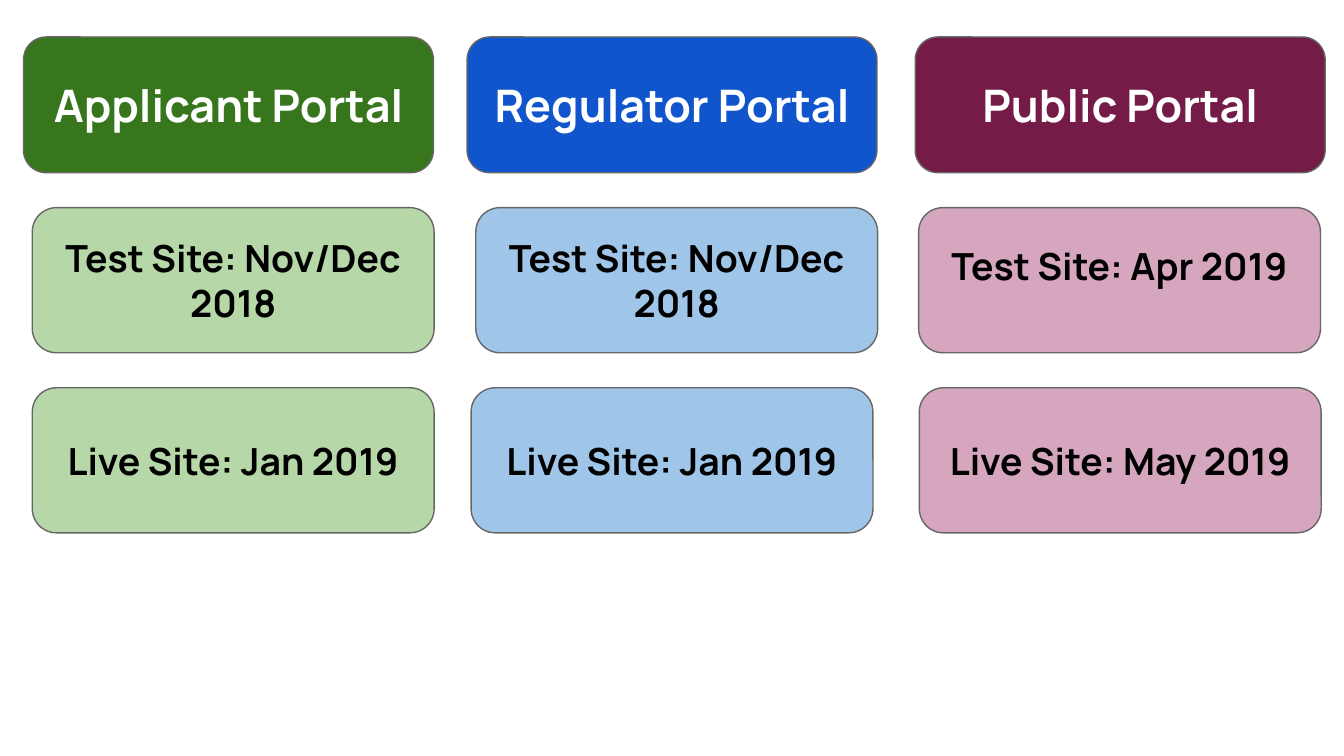
from dataclasses import dataclass

from pptx import Presentation
from pptx.dml.color import RGBColor
from pptx.enum.shapes import MSO_SHAPE as Shape
from pptx.enum.text import MSO_ANCHOR as Anchor, PP_ALIGN as Align
from pptx.util import Pt

PX = 4572  # EMU per px, 200 px to the inch


@dataclass(frozen=True)
class Theme:
    font: str = "Manrope"
    outline: str = "666666"
    light_text: str = "FFFFFF"
    dark_text: str = "000000"
    green: tuple = ("38761D", "B6D7A8")
    blue: tuple = ("1155CC", "9FC5E8")
    plum: tuple = ("741B47", "D5A6BD")
    header_size: int = 24
    site_size: int = 20
    line_width: float = 0.75


THEME = Theme()
SLIDE_W, SLIDE_H = 2000, 1125
TOP = 55
HEADER_W, HEADER_H = 610, 202
SITE_W, SITE_H = 598, 216
SITE_TOP, SITE_PITCH = 254, 268
INSET = 20

# left, (header fill, site fill), title, sites as (text, indent, lift)
PORTALS = [
    (35, THEME.green, "Applicant Portal",
     [("Test Site: Nov/Dec 2018", 13, 0), ("Live Site: Jan 2019", 13, 0)]),
    (695, THEME.blue, "Regulator Portal",
     [("Test Site: Nov/Dec 2018", 13, 0), ("Live Site: Jan 2019", 6, 0)]),
    (1362, THEME.plum, "Public Portal",
     [("Test Site: Apr 2019", 5, 22), ("Live Site: May 2019", 6, 0)]),
]


def add_card(slide, box, text, fill, color, size, lift=0):
    """Add a rounded card; lift raises its text above the middle, in px."""
    sp = slide.shapes.add_shape(Shape.ROUNDED_RECTANGLE, *(v * PX for v in box))
    sp.shadow.inherit = False
    sp.fill.solid()
    sp.fill.fore_color.rgb = RGBColor.from_string(fill)
    sp.line.color.rgb = RGBColor.from_string(THEME.outline)
    sp.line.width = Pt(THEME.line_width)

    tf = sp.text_frame
    tf.word_wrap = True
    tf.vertical_anchor = Anchor.MIDDLE
    tf.margin_left = tf.margin_right = tf.margin_top = INSET * PX
    tf.margin_bottom = (INSET + 2 * lift) * PX
    p = tf.paragraphs[0]
    p.text = text
    p.alignment = Align.CENTER
    p.font.name = THEME.font
    p.font.size = Pt(size)
    p.font.bold = True
    p.font.color.rgb = RGBColor.from_string(color)


def add_portal(slide, left, top, fills, title, sites):
    header_fill, site_fill = fills
    add_card(slide, (left, top, HEADER_W, HEADER_H), title,
             header_fill, THEME.light_text, THEME.header_size)
    for row, (text, indent, lift) in enumerate(sites):
        box = (left + indent, top + SITE_TOP + row * SITE_PITCH, SITE_W, SITE_H)
        add_card(slide, box, text, site_fill, THEME.dark_text,
                 THEME.site_size, lift)


def main():
    prs = Presentation()
    prs.slide_width, prs.slide_height = SLIDE_W * PX, SLIDE_H * PX
    slide = prs.slides.add_slide(prs.slide_layouts[6])
    for left, fills, title, sites in PORTALS:
        add_portal(slide, left, TOP, fills, title, sites)
    prs.save("out.pptx")


if __name__ == "__main__":
    main()
